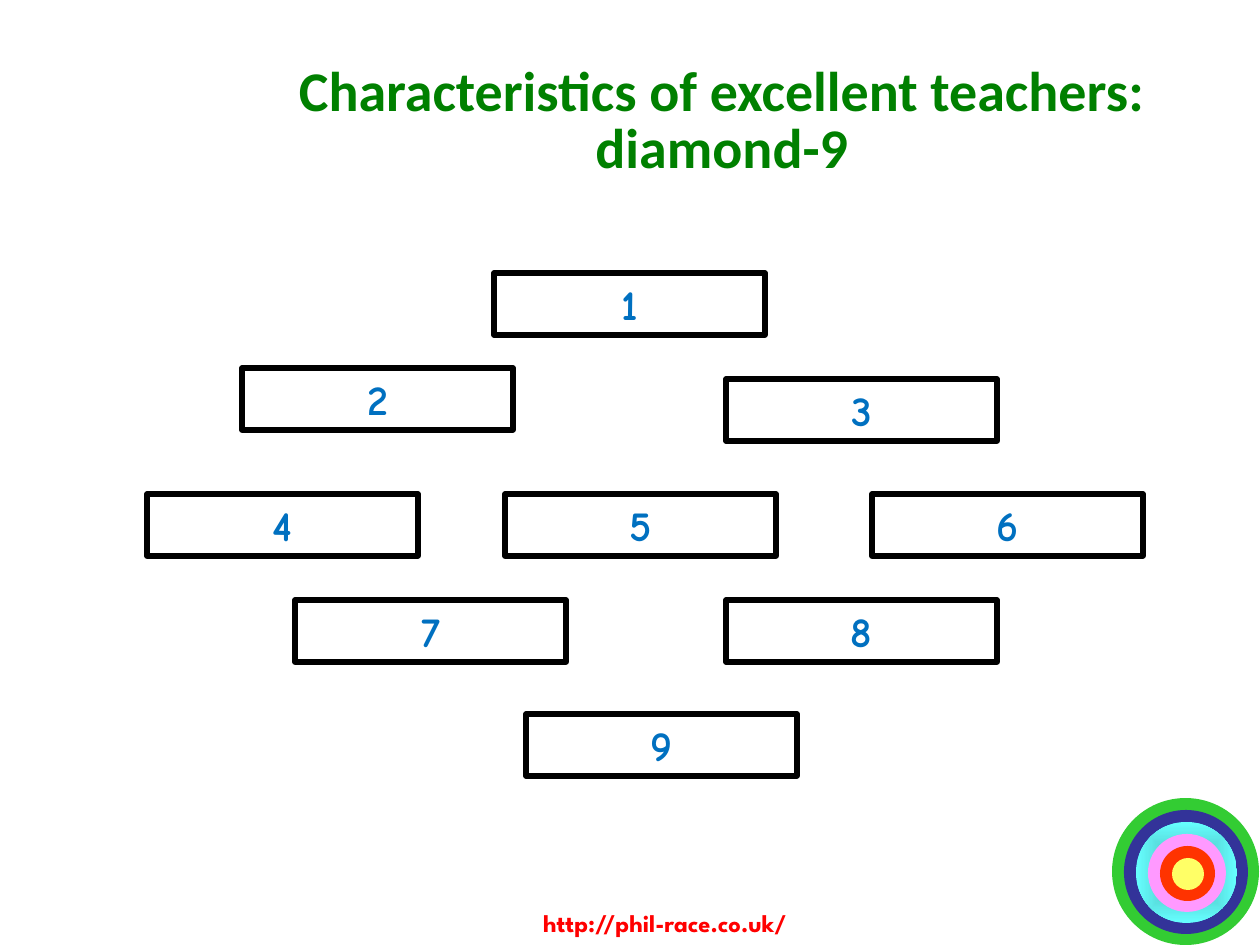
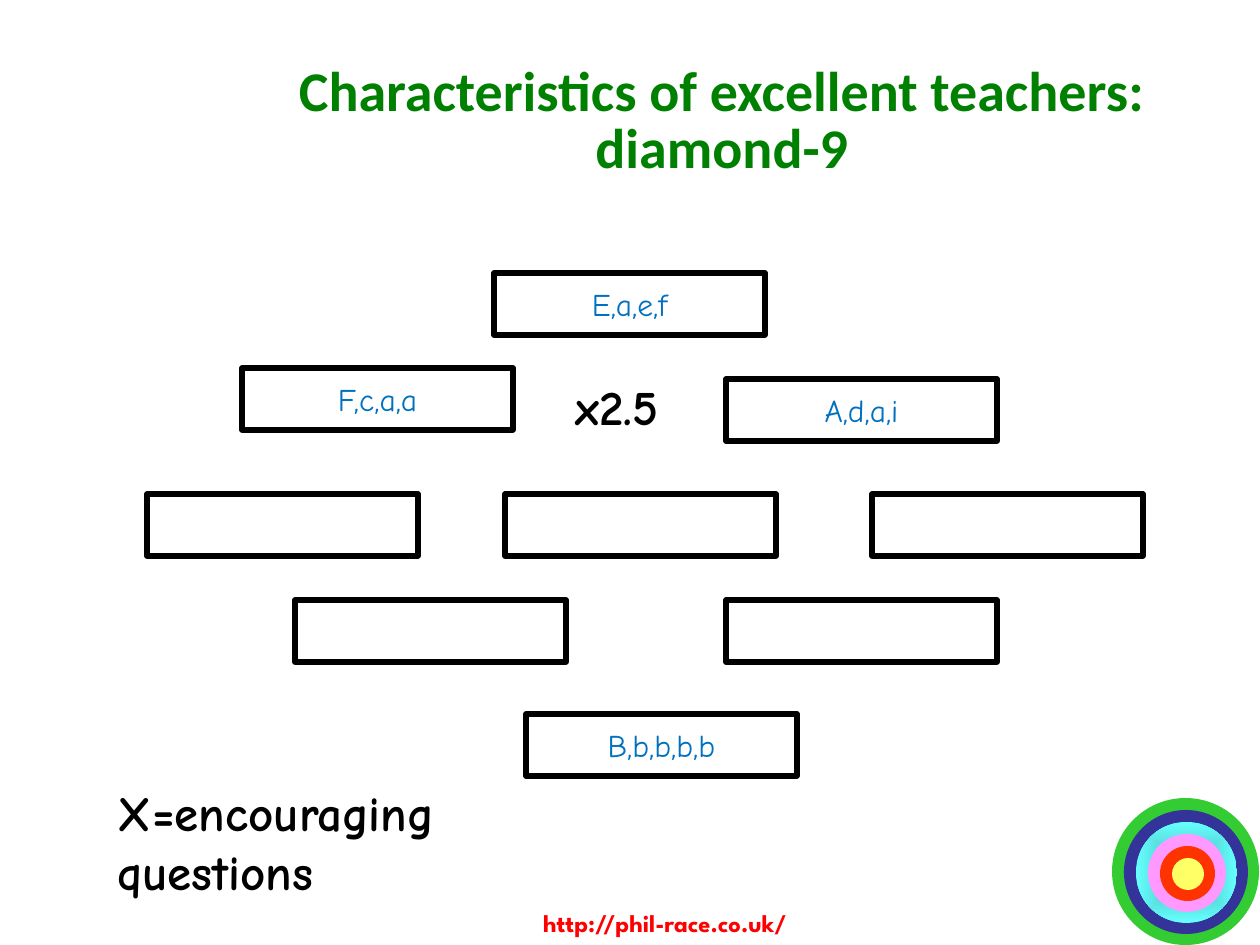
from pptx import Presentation
from pptx.dml.color import RGBColor
from pptx.enum.shapes import MSO_SHAPE
from pptx.enum.text import MSO_ANCHOR, MSO_AUTO_SIZE, PP_ALIGN
from pptx.oxml import parse_xml
from pptx.oxml.ns import nsdecls, qn
from pptx.util import Emu, Pt

SCALE = 914400 / 126
TITLE = "Characteristics of excellent teachers: diamond-9"
SITE = "http://phil-race.co.uk/"
GREEN, BLUE, RED, BLACK, WHITE = "008000", "0070C0", "FF0000", "000000", "FFFFFF"
HEAD, BODY, FOOT = "Calibri", "Comic Neue", "League Spartan"
GLOW = ("47B2B2", "66FFFF")
RINGS = ["33CC33", "333399", GLOW, "FF99FF", "FF3300", "FFFF66"]
SPOTS = [
    (494, 273),
    (242, 368), (726, 379),
    (147, 494), (505, 494), (872, 494),
    (295, 600), (726, 600),
    (526, 714),
]
SOLID = SPOTS[6]
RANKS = [str(rank) for rank in range(1, 10)]
VOTES = ["E,a,e,f", "F,c,a,a", "A,d,a,i", "", "", "", "", "", "B,b,b,b,b"]


def px(*nums):
    """Turn pixel lengths into a list of EMU lengths."""
    return [Emu(round(num * SCALE)) for num in nums]


def color(code):
    """Return the colour of a hex string."""
    return RGBColor.from_string(code)


def write(frame, text, face, size, tint, bold=True, align=PP_ALIGN.CENTER):
    """Put one styled paragraph into a text frame."""
    line = frame.paragraphs[0]
    line.text = text
    line.alignment = align
    font = line.font
    font.name, font.size, font.bold = face, Pt(size), bold
    font.color.rgb = color(tint)
    return line


def paint(shape, fill):
    """Fill a shape with nothing, one colour or a glow from its centre."""
    if fill is None:
        shape.fill.background()
    elif isinstance(fill, tuple):
        shape.fill.gradient()
        for stop, tint in zip(shape.fill.gradient_stops, fill):
            stop.color.rgb = color(tint)
        grad = shape._element.spPr.find(qn("a:gradFill"))
        glow = parse_xml(
            f'<a:path {nsdecls("a")} path="shape">'
            '<a:fillToRect l="50000" t="50000" r="50000" b="50000"/></a:path>')
        grad.replace(grad.find(qn("a:lin")), glow)
    else:
        shape.fill.solid()
        shape.fill.fore_color.rgb = color(fill)


def add_title(slide):
    """Place and style the slide title."""
    title = slide.shapes.title
    title.left, title.top, title.width, title.height = px(184, 48, 1076, 150)
    frame = title.text_frame
    frame.auto_size = MSO_AUTO_SIZE.NONE
    frame.vertical_anchor = MSO_ANCHOR.MIDDLE
    write(frame, TITLE, HEAD, 32, GREEN).line_spacing = 0.85


def add_rings(slide):
    """Draw the target of nested discs in the corner."""
    for step, fill in enumerate(RINGS):
        side = 147 - 23 * step
        place = px(1112 + 12 * step, 798 + 12 * step, side, side)
        disc = slide.shapes.add_shape(MSO_SHAPE.OVAL, *place)
        disc.shadow.inherit = False
        disc.line.fill.background()
        paint(disc, fill)


def add_label(slide, place, text, face, size, tint, align=PP_ALIGN.LEFT):
    """Add a wrapping text box."""
    frame = slide.shapes.add_textbox(*px(*place)).text_frame
    frame.word_wrap = True
    frame.auto_size = MSO_AUTO_SIZE.SHAPE_TO_FIT_TEXT
    write(frame, text, face, size, tint, align=align)


def add_boxes(slide, words, size, bold):
    """Lay out the nine framed boxes as a diamond."""
    for spot, text in zip(SPOTS, words):
        box = slide.shapes.add_shape(MSO_SHAPE.RECTANGLE, *px(*spot, 271, 62))
        box.shadow.inherit = False
        paint(box, WHITE if spot == SOLID else None)
        box.line.color.rgb = color(BLACK)
        box.line.width = Pt(3)
        if text:
            frame = box.text_frame
            frame.word_wrap = False
            frame.vertical_anchor = MSO_ANCHOR.MIDDLE
            write(frame, text, BODY, size, BLUE, bold)


def add_page(deck, words, size, bold):
    """Add a slide with the shared parts and a filled diamond."""
    slide = deck.slides.add_slide(deck.slide_layouts[5])
    add_rings(slide)
    add_label(slide, (483, 902, 364, 43), SITE, FOOT, 14, RED, PP_ALIGN.CENTER)
    add_title(slide)
    add_boxes(slide, words, size, bold)
    return slide


def main():
    """Build both slides and save the deck."""
    deck = Presentation()
    deck.slide_width, deck.slide_height = px(1260, 945)
    add_page(deck, RANKS, 24, True)
    slide = add_page(deck, VOTES, 18, False)
    add_label(slide, (563, 370, 155, 72), "x2.5", BODY, 28, BLACK)
    add_label(slide, (105, 776, 422, 131), "X=encouraging questions", BODY, 28, BLACK)
    deck.save("out.pptx")


if __name__ == "__main__":
    main()
